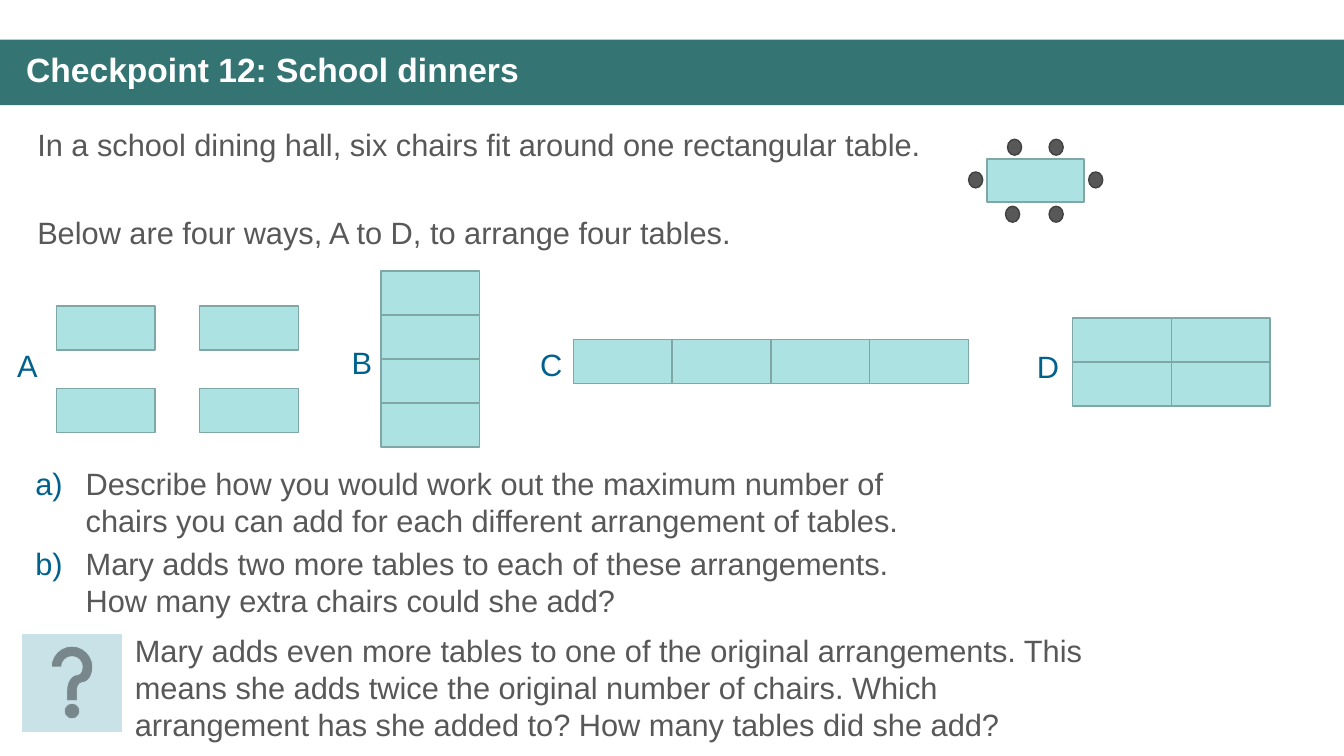
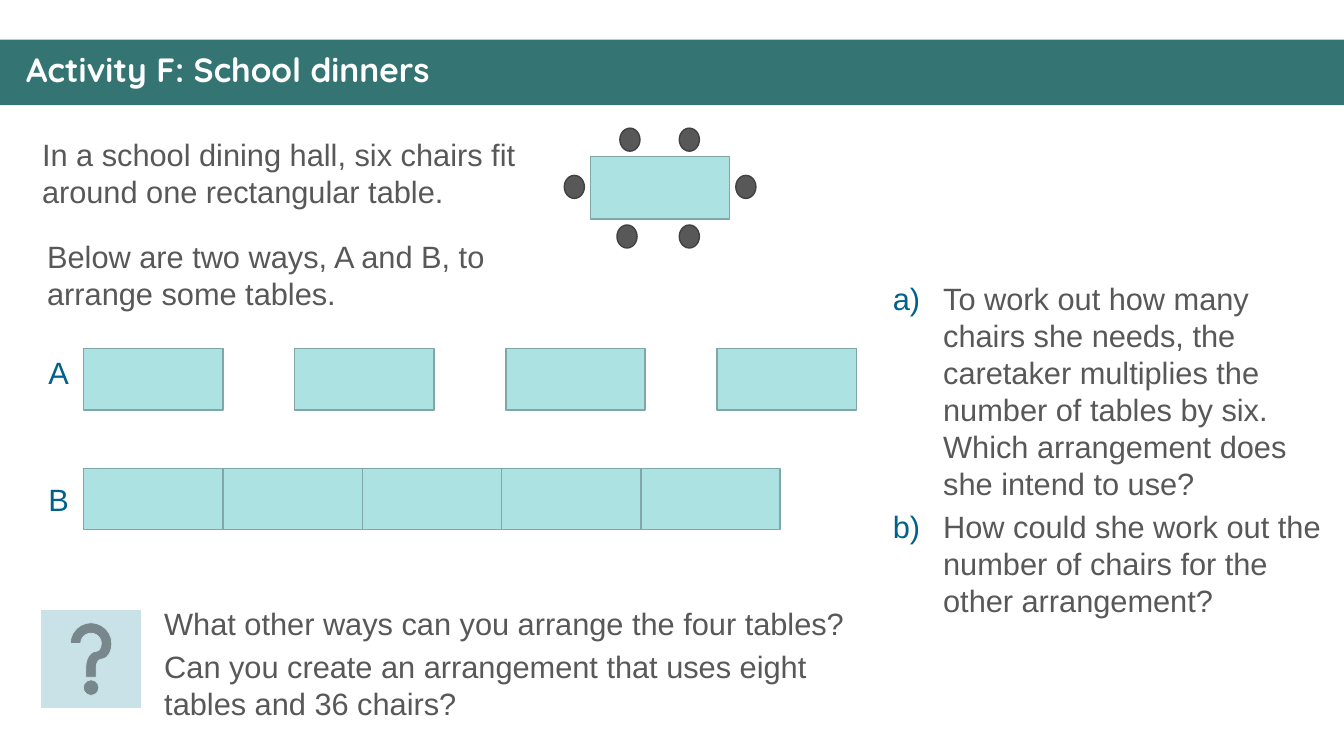
from pptx import Presentation
from pptx import util as u
from pptx.dml import color
from pptx.enum import shapes, text
from pptx.oxml import ns
from lxml import etree

TEAL, TABLE, TABLE_EDGE = "347574", "ADE2E2", "80A7A7"
GREY, CHAIR_EDGE = "585858", "414141"
BLUE, HELP, WHITE = "00628C", "C8E2E8", "FFFFFF"
SHAPE = shapes.MSO_SHAPE

# Chair corners as fractions of the box around a table with its chairs
CHAIRS = [(0.895, 0.39), (0, 0.39), (0.29, 0), (0.6, 0), (0.275, 0.8), (0.6, 0.8)]


def rgb(value):
    return color.RGBColor.from_string(value)


def cm(*lengths):
    return [u.Cm(length) for length in lengths]


def add_shape(parent, kind, box, fill, edge=None, weight=1):
    sp = parent.add_shape(kind, *cm(*box))
    sp.shadow.inherit = False
    sp.fill.solid()
    sp.fill.fore_color.rgb = rgb(fill)
    if edge:
        sp.line.color.rgb = rgb(edge)
        sp.line.width = u.Pt(weight)
    else:
        sp.line.fill.background()
    return sp


def style_run(r, size, hue, font="Arial", bold=False):
    r.font.size, r.font.name, r.font.bold = u.Pt(size), font, bold
    r.font.color.rgb = rgb(hue)


def number_paragraph(p):
    """Hang the paragraph behind a blue a), b), ... number."""
    pPr = p._p.get_or_add_pPr()
    pPr.set("marL", str(u.Cm(1.27)))
    pPr.set("indent", str(-u.Cm(1.27)))
    bu_clr = etree.SubElement(pPr, ns.qn("a:buClr"))
    etree.SubElement(bu_clr, ns.qn("a:srgbClr"), val=BLUE)
    etree.SubElement(pPr, ns.qn("a:buFont"), typeface="Arial")
    etree.SubElement(pPr, ns.qn("a:buAutoNum"), type="alphaLcParenR")


def add_text(s, box, paragraphs, hue=GREY, wrap=True, numbered=False):
    tf = s.shapes.add_textbox(*cm(*box)).text_frame
    tf.word_wrap = wrap
    for i, line in enumerate(paragraphs):
        p = tf.add_paragraph() if i else tf.paragraphs[0]
        p.text = line
        p.line_spacing = u.Pt(26.4)
        if i:
            p.space_before = u.Pt(4.4)
        if numbered:
            number_paragraph(p)
        style_run(p.runs[0], 22, hue)


def title_slide(prs, title, font):
    """Start a slide with the shared band and title."""
    s = prs.slides.add_slide(prs.slide_layouts[6])
    add_shape(s.shapes, SHAPE.RECTANGLE, (0, 1, 33.87, 1.65), TEAL)
    tf = s.shapes.add_textbox(*cm(0.41, 1.22, 33.12, 1.19)).text_frame
    tf.word_wrap = True
    tf.vertical_anchor = text.MSO_ANCHOR.MIDDLE
    p = tf.paragraphs[0]
    p.text = title
    p.line_spacing = 0.9
    style_run(p.runs[0], 24, WHITE, font, True)
    return s


def table_with_chairs(s, box):
    x, y, w, h = box
    group = s.shapes.add_group_shape().shapes
    add_shape(group, SHAPE.RECTANGLE,
              (x + 0.136 * w, y + 0.235 * h, 0.725 * w, 0.515 * h), TABLE, TABLE_EDGE)
    for fx, fy in CHAIRS:
        add_shape(group, SHAPE.OVAL, (x + fx * w, y + fy * h, 0.105 * w, 0.19 * h),
                  GREY, CHAIR_EDGE)


def arrangement(s, label, label_at, corner, grid, size, step=None):
    """Lay tables out in columns and rows; without a step they touch."""
    (x, y), (cols, rows) = corner, grid
    dx, dy = step or size
    for row in range(rows):
        for col in range(cols):
            add_shape(s.shapes, SHAPE.RECTANGLE, (x + col * dx, y + row * dy, *size),
                      TABLE, TABLE_EDGE)
    add_text(s, (*label_at, 1.05, 1.19), [label], BLUE, wrap=False)


def challenge(s, corner, text_box, paragraphs):
    add_shape(s.shapes, SHAPE.ACTION_BUTTON_HELP, (*corner, 2.51, 2.44), HELP, HELP, 0.5)
    add_text(s, text_box, paragraphs)


def checkpoint_slide(prs):
    s = title_slide(prs, "Checkpoint 12: School dinners", "Arial")

    # Introduction
    add_text(s, (0.69, 3.05, 27.74, 1.19),
             ["In a school dining hall, six chairs fit around one rectangular table."])
    table_with_chairs(s, (24.41, 3.51, 3.38, 2.11))
    add_text(s, (0.69, 5.26, 27.74, 1.19),
             ["Below are four ways, A to D, to arrange four tables."])

    # Four arrangements
    size = (2.49, 1.11)
    arrangement(s, "A", (0.18, 8.61), (1.42, 7.71), (2, 2), size, (3.61, 2.08))
    arrangement(s, "B", (8.61, 8.53), (9.6, 6.83), (1, 4), size)
    arrangement(s, "C", (13.36, 8.59), (14.45, 8.56), (4, 1), size)
    arrangement(s, "D", (25.88, 8.64), (27.03, 8.01), (2, 2), size)

    # Questions
    add_text(s, (0.64, 11.58, 23.77, 4.22), [
        "Describe how you would work out the maximum number of chairs you can add "
        "for each different arrangement of tables.",
        "Mary adds two more tables to each of these arrangements. "
        "How many extra chairs could she add?"], numbered=True)
    challenge(s, (0.56, 15.98), (3.15, 15.8, 24.41, 3.07), [
        "Mary adds even more tables to one of the original arrangements. This means "
        "she adds twice the original number of chairs. Which arrangement has she "
        "added to? How many tables did she add?"])


def activity_slide(prs):
    s = title_slide(prs, "Activity F: School dinners", "Quicksand")

    # Introduction
    add_text(s, (0.81, 3.3, 14.22, 2.13),
             ["In a school dining hall, six chairs fit around one rectangular table."])
    table_with_chairs(s, (14.22, 3.23, 4.83, 3.05))
    add_text(s, (0.94, 5.87, 12.85, 2.13),
             ["Below are two ways, A and B, to arrange some tables."])

    # Two arrangements
    size = (3.51, 1.54)
    arrangement(s, "A", (0.97, 8.79), (2.11, 8.79), (4, 1), size, (5.32, 0))
    arrangement(s, "B", (0.97, 11.99), (2.11, 11.81), (5, 1), size)

    # Questions
    add_text(s, (22.25, 6.93, 11.61, 8.92), [
        "To work out how many chairs she needs, the caretaker multiplies the number "
        "of tables by six. Which arrangement does she intend to use?",
        "How could she work out the number of chairs for the other arrangement?"],
        numbered=True)
    challenge(s, (1.04, 15.39), (3.89, 15.11, 18.36, 3.28), [
        "What other ways can you arrange the four tables?",
        "Can you create an arrangement that uses eight tables and 36 chairs?"])


def main():
    prs = Presentation()
    prs.slide_width, prs.slide_height = cm(33.87, 19.05)
    checkpoint_slide(prs)
    activity_slide(prs)
    prs.save("out.pptx")


if __name__ == "__main__":
    main()
